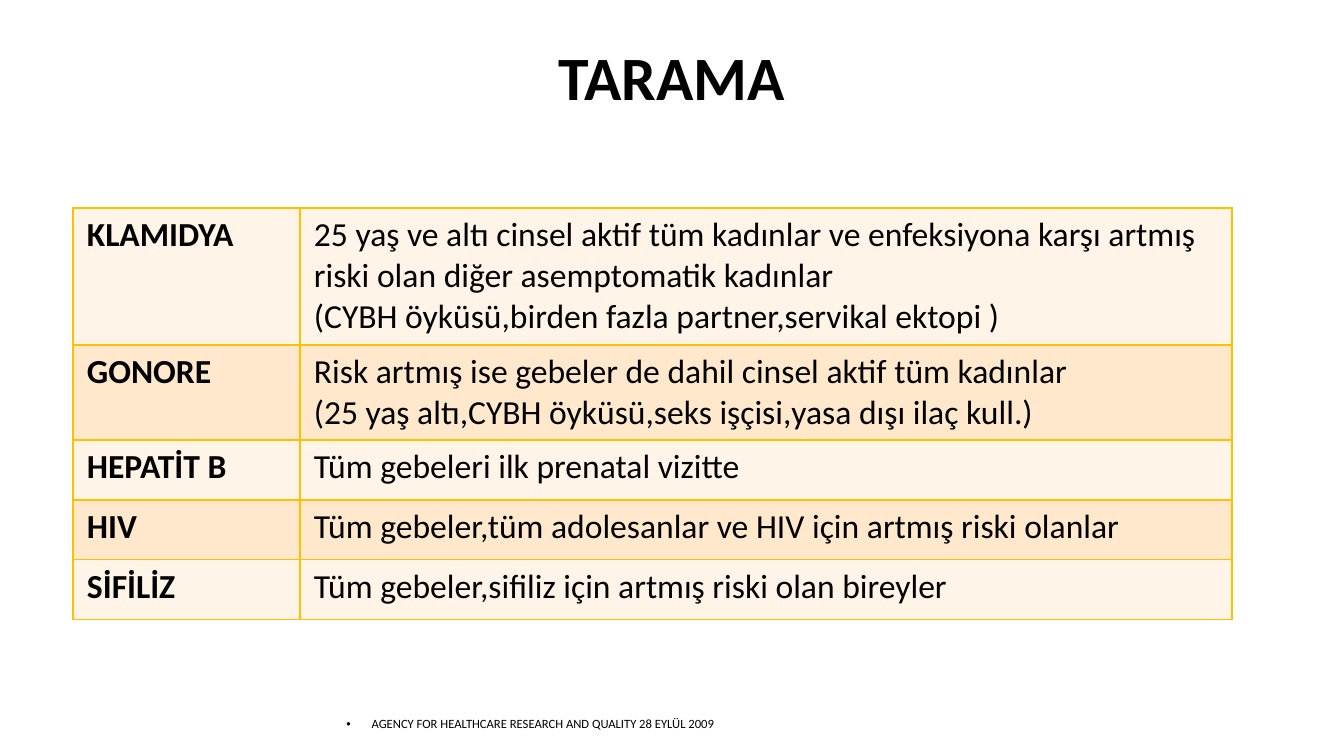
from dataclasses import dataclass

import pptx
import pptx.dml.color
import pptx.enum.text
import pptx.oxml
import pptx.oxml.ns
import pptx.util

RGBColor = pptx.dml.color.RGBColor
PP_ALIGN = pptx.enum.text.PP_ALIGN
MSO_ANCHOR = pptx.enum.text.MSO_ANCHOR

EMU_PER_PX = 914400 / 100.8
FONT = "Calibri"
BLACK = RGBColor(0x00, 0x00, 0x00)
GOLD = RGBColor(0xFF, 0xC0, 0x00)
BANDS = (RGBColor(0xFF, 0xF4, 0xE7), RGBColor(0xFF, 0xE8, 0xCC))


@dataclass(frozen=True)
class Caption:
    text: str
    left: int
    top: int
    width: int
    height: int
    size: int
    bold: bool = False
    bullet: bool = False
    space_after: int = 0


@dataclass(frozen=True)
class Screening:
    disease: str
    groups: tuple[str, ...]
    height: int


CAPTIONS = (
    Caption("TARAMA", 111, 19, 1122, 123, 44, bold=True),
    Caption("AGENCY FOR HEALTHCARE RESEARCH AND QUALITY 28 EYLÜL 2009",
            -48, 682, 1177, 85, 9, bullet=True, space_after=6),
)

SCREENINGS = (
    Screening("KLAMIDYA", (
        "25 yaş ve altı cinsel aktif tüm kadınlar ve enfeksiyona karşı artmış "
        "riski olan diğer asemptomatik kadınlar",
        "(CYBH öyküsü,birden fazla partner,servikal ektopi )"), 137),
    Screening("GONORE", (
        "Risk artmış ise gebeler de dahil cinsel aktif tüm kadınlar",
        "(25 yaş altı,CYBH öyküsü,seks işçisi,yasa dışı ilaç kull.)"), 95),
    Screening("HEPATİT B", ("Tüm gebeleri ilk prenatal vizitte",), 60),
    Screening("HIV", ("Tüm gebeler,tüm adolesanlar ve HIV için artmış riski olanlar",), 60),
    Screening("SİFİLİZ", ("Tüm gebeler,sifiliz için artmış riski olan bireyler",), 60),
)

TABLE_LEFT, TABLE_TOP = 73, 208
COLUMN_WIDTHS = (227, 932)


def px(n: int) -> int:
    return pptx.util.Emu(round(n * EMU_PER_PX))


def add_run(p, text: str, size: int, bold: bool) -> None:
    r = p.add_run()
    r.text = text
    r.font.name = FONT
    r.font.size = pptx.util.Pt(size)
    r.font.bold = bold
    r.font.color.rgb = BLACK


def add_bullet(p) -> None:
    pPr = p._p.get_or_add_pPr()
    pPr.set("marL", "0")
    pPr.set("indent", str(-pptx.util.Inches(0.25)))
    ns = pptx.oxml.ns.nsdecls("a")
    pPr.append(pptx.oxml.parse_xml(f'<a:buFont {ns} typeface="Arial"/>'))
    pPr.append(pptx.oxml.parse_xml(f'<a:buChar {ns} char="•"/>'))


def add_caption(s, caption: Caption) -> None:
    sp = s.shapes.add_textbox(px(caption.left), px(caption.top),
                              px(caption.width), px(caption.height))
    tf = sp.text_frame
    tf.word_wrap = True
    tf.vertical_anchor = MSO_ANCHOR.MIDDLE
    p = tf.paragraphs[0]
    if caption.bullet:
        add_bullet(p)
    p.alignment = PP_ALIGN.CENTER
    p.line_spacing = 0.9
    p.space_after = pptx.util.Pt(caption.space_after)
    add_run(p, caption.text, caption.size, caption.bold)


def add_borders(cell) -> None:
    tcPr = cell._tc.get_or_add_tcPr()
    for side in ("lnL", "lnR", "lnT", "lnB"):
        tcPr.append(pptx.oxml.parse_xml(
            f'<a:{side} {pptx.oxml.ns.nsdecls("a")} w="{pptx.util.Pt(1)}">'
            f'<a:solidFill><a:srgbClr val="{GOLD}"/></a:solidFill></a:{side}>'))


def fill_cell(cell, lines: tuple[str, ...], band: RGBColor, bold: bool) -> None:
    add_borders(cell)
    cell.fill.solid()
    cell.fill.fore_color.rgb = band
    cell.margin_left = cell.margin_right = px(14)
    cell.margin_top = cell.margin_bottom = px(7)
    tf = cell.text_frame
    for i, line in enumerate(lines):
        p = tf.add_paragraph() if i else tf.paragraphs[0]
        add_run(p, line, 24, bold)


def add_screening_table(s) -> None:
    height = sum(screening.height for screening in SCREENINGS)
    table = s.shapes.add_table(len(SCREENINGS), len(COLUMN_WIDTHS),
                               px(TABLE_LEFT), px(TABLE_TOP),
                               px(sum(COLUMN_WIDTHS)), px(height)).table
    table.first_row = False
    table.horz_banding = False
    for column, width in zip(table.columns, COLUMN_WIDTHS):
        column.width = px(width)
    for i, screening in enumerate(SCREENINGS):
        table.rows[i].height = px(screening.height)
        band = BANDS[i % len(BANDS)]
        fill_cell(table.cell(i, 0), (screening.disease,), band, bold=True)
        fill_cell(table.cell(i, 1), screening.groups, band, bold=False)


def main() -> None:
    prs = pptx.Presentation()
    prs.slide_width = px(1344)
    prs.slide_height = px(756)
    s = prs.slides.add_slide(prs.slide_layouts[6])

    # Title and source line
    for caption in CAPTIONS:
        add_caption(s, caption)

    # Screening recommendations
    add_screening_table(s)

    prs.save("out.pptx")


if __name__ == "__main__":
    main()
